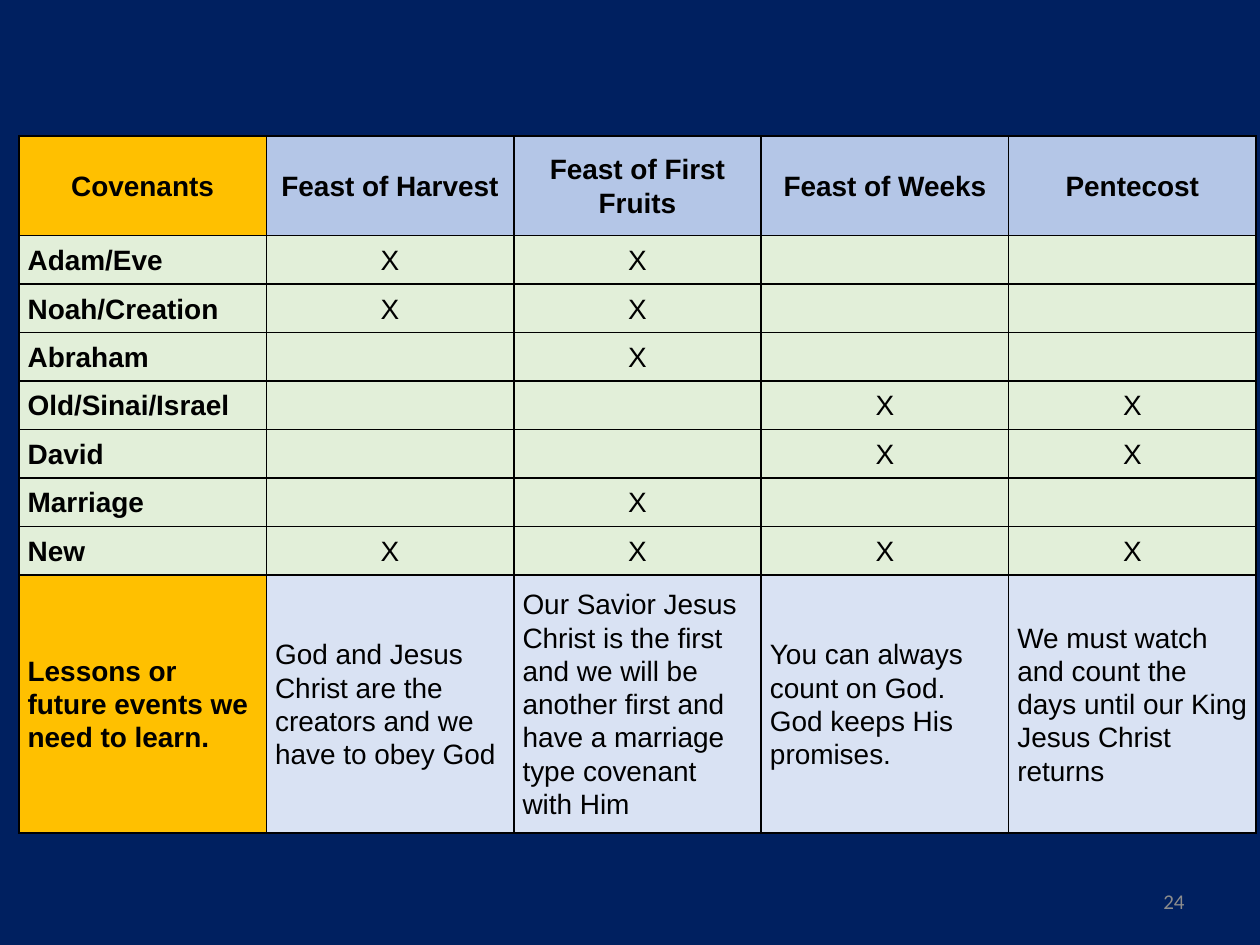
import dataclasses

import lxml.etree
import pptx
import pptx.dml.color
import pptx.enum.text
import pptx.oxml.ns
import pptx.util

Inches, Pt = pptx.util.Inches, pptx.util.Pt
ALIGN = pptx.enum.text.PP_ALIGN
MIDDLE = pptx.enum.text.MSO_ANCHOR.MIDDLE


@dataclasses.dataclass(frozen=True)
class Theme:
    background: str = "002060"
    heading: str = "FFC000"
    feast: str = "B4C6E7"
    covenant: str = "E2EFD9"
    lesson: str = "D9E2F3"
    ink: str = "000000"
    muted: str = "8C8C8C"
    table_font: str = "Arial"
    number_font: str = "Calibri"
    table_size: int = 16
    number_size: int = 12
    border_width: int = 1


THEME = Theme()
SLIDE_WIDTH, SLIDE_HEIGHT = 10, 7.5
TABLE_LEFT, TABLE_TOP, TABLE_WIDTH = 0.15, 1.08, 9.82
HEADER_HEIGHT, COVENANT_HEIGHT, LESSON_HEIGHT = 0.79, 0.385, 2.05

FEASTS = ["Feast of Harvest", "Feast of First Fruits", "Feast of Weeks", "Pentecost"]
COVENANTS = {
    "Adam/Eve": "XX--",
    "Noah/Creation": "XX--",
    "Abraham": "-X--",
    "Old/Sinai/Israel": "--XX",
    "David": "--XX",
    "Marriage": "-X--",
    "New": "XXXX",
}
LESSONS = [
    "God and Jesus Christ are the creators and we have to obey God",
    "Our Savior Jesus Christ is the first and we will be another first "
    "and have a marriage type covenant with Him",
    "You can always count on God. God keeps His promises.",
    "We must watch and count the days until our King Jesus Christ returns",
]


def rgb(value):
    return pptx.dml.color.RGBColor.from_string(value)


def paint(fill, color):
    fill.solid()
    fill.fore_color.rgb = rgb(color)


def write(para, text, font_name, size, color, align, bold=False):
    para.text = text
    para.alignment = align
    font = para.font
    font.name, font.size, font.bold = font_name, Pt(size), bold
    font.color.rgb = rgb(color)


def add_borders(cell):
    """Put border lines ahead of the fill, as the cell schema requires."""
    properties = cell._tc.get_or_add_tcPr()
    qn = pptx.oxml.ns.qn
    for index, side in enumerate(("lnL", "lnR", "lnT", "lnB")):
        line = lxml.etree.Element(qn(f"a:{side}"), w=str(Pt(THEME.border_width)))
        solid = lxml.etree.SubElement(line, qn("a:solidFill"))
        lxml.etree.SubElement(solid, qn("a:srgbClr"), val=THEME.ink)
        properties.insert(index, line)


def fill_cell(cell, text, color, align, bold):
    paint(cell.fill, color)
    add_borders(cell)
    cell.vertical_anchor = MIDDLE
    cell.margin_left = cell.margin_right = Inches(0.07)
    cell.margin_top = cell.margin_bottom = 0
    para = cell.text_frame.paragraphs[0]
    write(para, text, THEME.table_font, THEME.table_size, THEME.ink, align, bold)
    para.line_spacing = 1.07


def fill_row(table, row, label, texts, label_color, color, label_align, align, bold=False):
    fill_cell(table.cell(row, 0), label, label_color, label_align, True)
    for column, text in enumerate(texts, start=1):
        fill_cell(table.cell(row, column), text, color, align, bold)


def add_covenant_table(page):
    heights = [HEADER_HEIGHT] + [COVENANT_HEIGHT] * len(COVENANTS) + [LESSON_HEIGHT]
    column_count = len(FEASTS) + 1
    table = page.shapes.add_table(
        len(heights), column_count, Inches(TABLE_LEFT), Inches(TABLE_TOP),
        Inches(TABLE_WIDTH), Inches(sum(heights))).table
    table.first_row = table.horz_banding = False
    for column in table.columns:
        column.width = Inches(TABLE_WIDTH / column_count)
    for row, height in zip(table.rows, heights):
        row.height = Inches(height)

    fill_row(table, 0, "Covenants", FEASTS, THEME.heading, THEME.feast,
             ALIGN.CENTER, ALIGN.CENTER, bold=True)
    for row, (covenant, marks) in enumerate(COVENANTS.items(), start=1):
        fill_row(table, row, covenant, [mark.strip("-") for mark in marks],
                 THEME.covenant, THEME.covenant, ALIGN.LEFT, ALIGN.CENTER)
    fill_row(table, len(heights) - 1, "Lessons or future events we need to learn.",
             LESSONS, THEME.heading, THEME.lesson, ALIGN.LEFT, ALIGN.LEFT)


def add_page_number(page, number):
    box = page.shapes.add_textbox(Inches(7.17), Inches(6.95), Inches(2.33), Inches(0.4))
    frame = box.text_frame
    frame.word_wrap = True
    frame.vertical_anchor = MIDDLE
    write(frame.paragraphs[0], number, THEME.number_font, THEME.number_size,
          THEME.muted, ALIGN.RIGHT)


def main():
    deck = pptx.Presentation()
    deck.slide_width, deck.slide_height = Inches(SLIDE_WIDTH), Inches(SLIDE_HEIGHT)
    page = deck.slides.add_slide(deck.slide_layouts[6])
    paint(page.background.fill, THEME.background)
    add_page_number(page, "24")
    add_covenant_table(page)
    deck.save("out.pptx")


if __name__ == "__main__":
    main()
